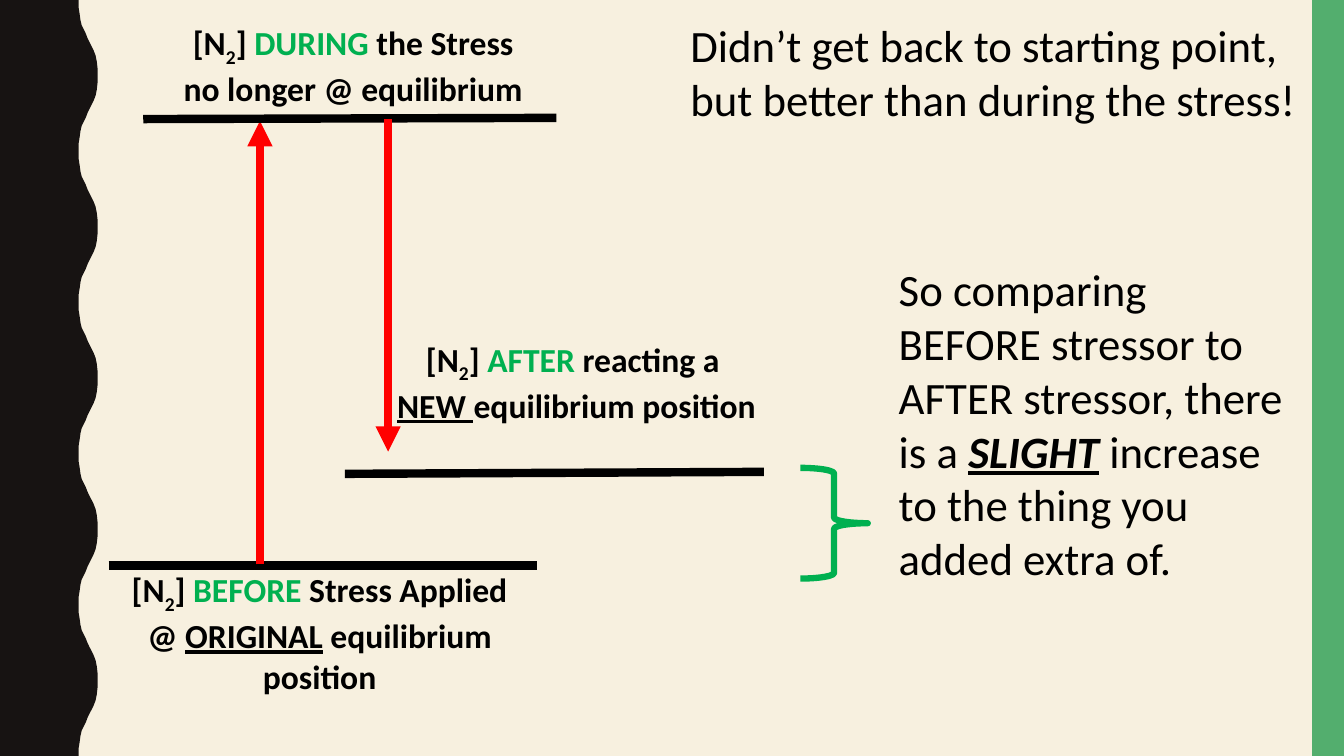
"""Build a slide on how [N2] shifts before, during and after a stress."""
from lxml import etree
from pptx import Presentation
from pptx.dml.color import RGBColor
from pptx.enum.shapes import MSO_CONNECTOR, MSO_SHAPE
from pptx.enum.text import MSO_AUTO_SIZE, PP_ALIGN
from pptx.oxml.ns import qn
from pptx.util import Cm, Pt

STRAIGHT = MSO_CONNECTOR.STRAIGHT
RECTANGLE = MSO_SHAPE.RECTANGLE
RIGHT_BRACE = MSO_SHAPE.RIGHT_BRACE
LEFT = PP_ALIGN.LEFT
CENTER = PP_ALIGN.CENTER
NO_AUTO_SIZE = MSO_AUTO_SIZE.NONE

CREAM = RGBColor(0xF7, 0xF0, 0xDF)
INK = RGBColor(0x17, 0x13, 0x12)
BAR_GREEN = RGBColor(0x53, 0xAE, 0x6E)
GREEN = RGBColor(0x00, 0xB0, 0x50)
RED = RGBColor(0xFF, 0x00, 0x00)
BLACK = RGBColor(0x00, 0x00, 0x00)

WIDTH, HEIGHT = 33.87, 19.05
WAVE_COUNT = 5
WAVE_PERIOD = HEIGHT / WAVE_COUNT
HALF_WAVE = [
    (1.98, 0), (1.98, 0.18), (2.01, 0.36), (2.03, 0.51), (2.06, 0.64),
    (2.11, 0.74), (2.16, 0.84), (2.21, 0.97), (2.26, 1.07), (2.31, 1.17),
    (2.36, 1.27), (2.41, 1.4), (2.44, 1.55), (2.46, 1.73),
]
BREAK = ("\n", {})
LABEL = {"size": Pt(24), "bold": True}
NOTE = {"size": Pt(32)}
UNDERLINED = {"underline": True}
STRONG = {"bold": True, "italic": True, "underline": True}


class SlideBuilder:
    """Hold the style and the current slide."""

    font_name = "Calibri"
    line_width = Pt(6)

    def __init__(self, slide):
        self.slide = slide
        self.shapes = slide.shapes

    def background(self, color):
        fill = self.slide.background.fill
        fill.solid()
        fill.fore_color.rgb = color

    def paint(self, shape, color):
        shape.shadow.inherit = False
        shape.fill.solid()
        shape.fill.fore_color.rgb = color
        shape.line.fill.background()

    def bar(self, left, top, width, height, color):
        shape = self.shapes.add_shape(
            RECTANGLE, Cm(left), Cm(top), Cm(width), Cm(height))
        self.paint(shape, color)

    def outline(self, points, color):
        start, *others = [(Cm(x), Cm(y)) for x, y in points]
        builder = self.shapes.build_freeform(*start)
        builder.add_line_segments(others, close=True)
        self.paint(builder.convert_to_shape(), color)

    def brace(self, left, top, width, height, color):
        shape = self.shapes.add_shape(
            RIGHT_BRACE, Cm(left), Cm(top), Cm(width), Cm(height))
        shape.shadow.inherit = False
        shape.fill.background()
        shape.line.color.rgb = color
        shape.line.width = Pt(4.5)

    def line(self, start, end, color, arrow=False):
        connector = self.shapes.add_connector(
            STRAIGHT, *(Cm(value) for value in (*start, *end)))
        connector.line.color.rgb = color
        connector.line.width = self.line_width
        properties = connector._element.spPr
        if arrow:
            etree.SubElement(properties.find(qn("a:ln")), qn("a:tailEnd"), type="triangle")
        etree.SubElement(properties, qn("a:effectLst"))

    def text(self, left, top, width, height, pieces, base, alignment=LEFT):
        box = self.shapes.add_textbox(Cm(left), Cm(top), Cm(width), Cm(height))
        frame = box.text_frame
        frame.word_wrap = True
        frame.auto_size = NO_AUTO_SIZE
        paragraph = frame.paragraphs[0]
        paragraph.alignment = alignment
        for words, changes in pieces:
            if words == "\n":
                paragraph.add_line_break()
                continue
            run = paragraph.add_run()
            run.text = words
            style = {"name": self.font_name, "color": BLACK, **base, **changes}
            run.font.color.rgb = style.pop("color")
            if style.pop("subscript", False):
                run._r.get_or_add_rPr().set("baseline", "-25000")
            for attribute, value in style.items():
                setattr(run.font, attribute, value)

    def label(self, left, top, width, height, stage, pieces):
        formula = [("[N", {}), ("2", {"subscript": True}), ("] ", {}),
                   (stage, {"color": GREEN})]
        self.text(left, top, width, height, formula + pieces, LABEL, CENTER)


def wave_points():
    peak = [(2.46, WAVE_PERIOD / 2)]
    falling = [(x, WAVE_PERIOD - y) for x, y in reversed(HALF_WAVE[1:])]
    wave = HALF_WAVE + peak + falling
    edge = [(x, y + index * WAVE_PERIOD)
            for index in range(WAVE_COUNT) for x, y in wave]
    return [(0, 0), *edge, (1.98, HEIGHT), (0, HEIGHT)]


def main():
    presentation = Presentation()
    presentation.slide_width, presentation.slide_height = Cm(WIDTH), Cm(HEIGHT)
    builder = SlideBuilder(presentation.slides.add_slide(presentation.slide_layouts[6]))

    builder.background(CREAM)
    builder.outline(wave_points(), INK)
    builder.bar(33.07, 0, 0.8, HEIGHT, BAR_GREEN)

    builder.line((2.74, 14.25), (13.54, 14.25), BLACK)
    builder.label(2.11, 14.22, 11.89, 3.33, "BEFORE", [
        (" Stress Applied", {}), BREAK, ("@ ", {}),
        ("ORIGINAL", UNDERLINED), (" equilibrium position", {})])
    builder.line((6.55, 14.22), (6.55, 3.05), RED, arrow=True)

    builder.line((3.61, 3), (14.02, 2.97), BLACK)
    builder.label(2.97, 0.43, 11.86, 2.31, "DURING", [
        (" the Stress", {}), BREAK, ("no longer @ equilibrium", {})])
    builder.line((9.78, 3), (9.78, 11.38), RED, arrow=True)

    builder.line((8.69, 11.94), (19.25, 11.89), BLACK)
    builder.label(9.35, 8.41, 10.36, 3.33, "AFTER", [
        (" reacting a ", {}), BREAK,
        ("NEW ", UNDERLINED), ("equilibrium position", {})])

    builder.brace(20.17, 11.79, 1.7, 2.79, GREEN)
    builder.text(22.4, 6.48, 10.26, 8.46, [
        ("So comparing BEFORE stressor to AFTER stressor, there is a ", {}),
        ("SLIGHT", STRONG),
        (" increase to the thing you added extra of.", {})], NOTE)
    builder.text(17.15, 0.33, 16.94, 3, [
        ("Didn’t get back to starting point, but better than during the stress!", {})], NOTE)

    presentation.save("out.pptx")


if __name__ == "__main__":
    main()
